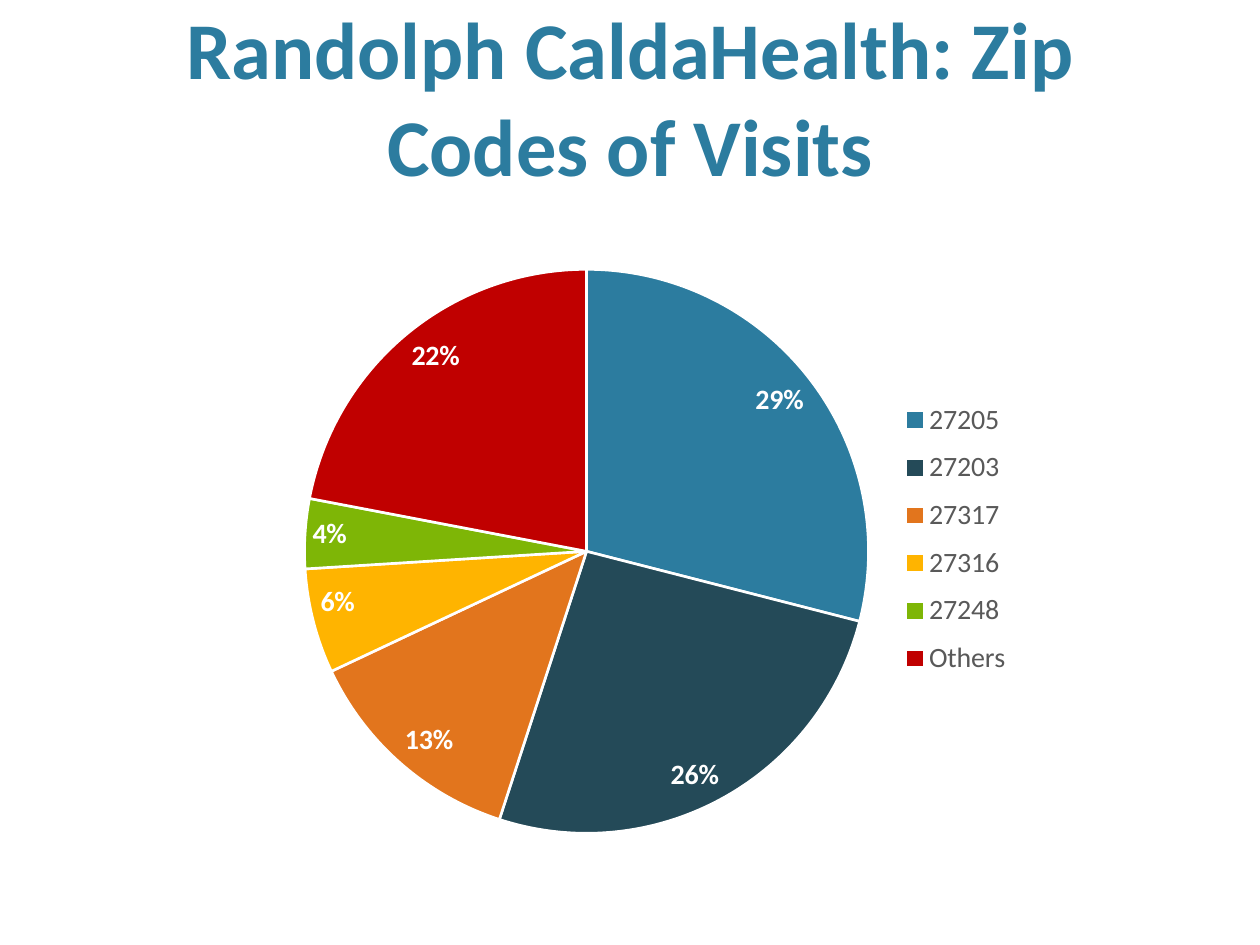
from lxml.etree import SubElement
from pptx import Presentation
from pptx.chart.data import CategoryChartData
from pptx.dml.color import RGBColor
from pptx.enum.chart import XL_CHART_TYPE, XL_LABEL_POSITION, XL_LEGEND_POSITION
from pptx.enum.text import MSO_ANCHOR, PP_ALIGN
from pptx.oxml.ns import qn
from pptx.util import Inches, Pt

FONT = "Calibri"
BLUE, WHITE, GREY = "2C7C9F", "FFFFFF", "595959"
VISITS = [
    ("27205", 29, BLUE),
    ("27203", 26, "244A58"),
    ("27317", 13, "E2751D"),
    ("27316", 6, "FFB400"),
    ("27248", 4, "7EB606"),
    ("Others", 22, "C00000"),
]


def color(hex_value):
    return RGBColor.from_string(hex_value)


def set_font(font, size, hex_value, bold=False):
    font.name, font.size, font.bold = FONT, Pt(size), bold
    font.color.rgb = color(hex_value)


def place(layout, x, y, w, h, inner=False):
    """Fix a chart part at shares of the chart's size."""
    manual = SubElement(layout, qn("c:manualLayout"))
    settings = {"xMode": "edge", "yMode": "edge", "x": x, "y": y, "w": w, "h": h}
    if inner:
        settings = {"layoutTarget": "inner", **settings}
    for tag, value in settings.items():
        SubElement(manual, qn(f"c:{tag}")).set("val", str(value))


def layout_of(part, before):
    """Return the part's layout element, added ahead of the named child if missing."""
    layout = part.find(qn("c:layout"))
    if layout is None:
        layout = SubElement(part, qn("c:layout"))
        part.find(qn(before)).addprevious(layout)
    return layout


class Deck:
    def __init__(self, width, height):
        self.presentation = Presentation()
        self.presentation.slide_width = self.width = Inches(width)
        self.presentation.slide_height = self.height = Inches(height)
        self.slide = self.presentation.slides.add_slide(self.presentation.slide_layouts[6])
        self.slide.background.fill.solid()
        self.slide.background.fill.fore_color.rgb = color(WHITE)

    def box(self, x, y, w, h):
        """Turn percentages of the slide's size into lengths."""
        return (int(x * self.width / 100), int(y * self.height / 100),
                int(w * self.width / 100), int(h * self.height / 100))

    def title(self, wording, *shares):
        frame = self.slide.shapes.add_textbox(*self.box(*shares)).text_frame
        frame.word_wrap = True
        frame.vertical_anchor = MSO_ANCHOR.BOTTOM
        paragraph = frame.paragraphs[0]
        paragraph.alignment = PP_ALIGN.CENTER
        run = paragraph.add_run()
        run.text = wording
        set_font(run.font, 46, BLUE, bold=True)

    def pie(self, slices, *shares):
        data = CategoryChartData()
        data.categories = [name for name, _, _ in slices]
        data.add_series("Series 1", [value for _, value, _ in slices])
        chart = self.slide.shapes.add_chart(
            XL_CHART_TYPE.PIE, *self.box(*shares), data).chart
        chart.has_title = False
        set_font(chart.font, 10, "000000")
        plot = chart.plots[0]
        plot.vary_by_categories = True
        for index, (_, _, fill) in enumerate(slices):
            look = plot.series[0].points[index].format
            look.fill.solid()
            look.fill.fore_color.rgb = color(fill)
            look.line.color.rgb = color(WHITE)
            look.line.width = Pt(1.5)
        plot.has_data_labels = True
        labels = plot.data_labels
        labels.show_percentage, labels.show_value = True, False
        labels.number_format, labels.number_format_is_linked = "0%", False
        labels.position = XL_LABEL_POSITION.INSIDE_END
        set_font(labels.font, 16, WHITE, bold=True)
        chart.has_legend = True
        legend = chart.legend
        legend.position = XL_LEGEND_POSITION.RIGHT
        legend.include_in_layout = False
        set_font(legend.font, 16, GREY)
        plot_area = chart.element.find(".//" + qn("c:plotArea"))
        place(layout_of(plot_area, "c:pieChart"), 0.2, 0.03, 0.52, 0.94, inner=True)
        legend_part = chart.element.find(".//" + qn("c:legend"))
        place(layout_of(legend_part, "c:overlay"), 0.75, 0.23, 0.1, 0.5)


def main():
    deck = Deck(10, 7.5)
    deck.title("Randolph CaldaHealth: Zip Codes of Visits", 6, 1.55, 88, 19.5)
    deck.pie(VISITS, 6.9, 26.6, 86.2, 63.5)
    deck.presentation.save("out.pptx")


if __name__ == "__main__":
    main()
